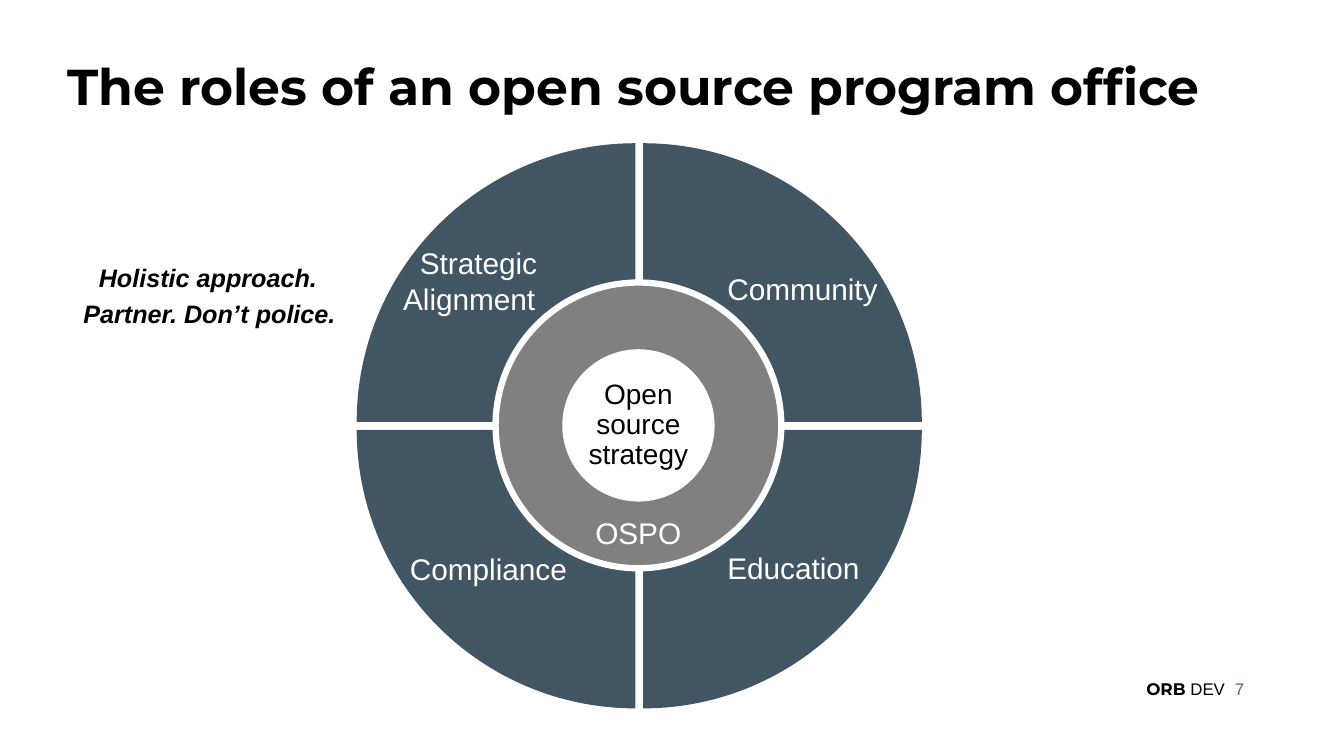
from pptx import Presentation
from pptx.dml.color import RGBColor
from pptx.enum.shapes import MSO_SHAPE as Shape
from pptx.enum.text import MSO_ANCHOR as Anchor, PP_ALIGN as Align
from pptx.util import Cm, Pt

BLACK = RGBColor(0x00, 0x00, 0x00)
WHITE = RGBColor(0xFF, 0xFF, 0xFF)
SLATE = RGBColor(0x42, 0x55, 0x63)
GREY = RGBColor(0x80, 0x80, 0x80)
PURPLE = RGBColor(0x72, 0x54, 0x78)

CENTER_X, CENTER_Y = 16.11, 10.73
RADIUS, HALF_GAP = 7.02, 0.1
QUADRANTS = [(-1, -1), (1, -1), (1, 1), (-1, 1)]


class WheelSlide:
    heading_font = "Montserrat"
    body_font = "Arial"

    def __init__(self, deck):
        self.shapes = deck.slides.add_slide(deck.slide_layouts[6]).shapes

    def style(self, span, size, color, font=None, bold=False, italic=False):
        span.font.name = font or self.body_font
        span.font.size = Pt(size)
        span.font.color.rgb = color
        span.font.bold = bold
        span.font.italic = italic

    def frame(self, box, inset, anchor):
        frame = box.text_frame
        frame.word_wrap = True
        frame.vertical_anchor = anchor
        frame.margin_left = frame.margin_right = Cm(inset)
        frame.margin_top = frame.margin_bottom = Cm(inset / 2)
        return frame

    def text(self, place, words, size, color, inset=0, anchor=Anchor.TOP,
             align=Align.LEFT, spacing=1.0, **look):
        box = self.shapes.add_textbox(*map(Cm, place))
        para = self.frame(box, inset, anchor).paragraphs[0]
        para.text = words
        para.alignment = align
        para.line_spacing = spacing
        self.style(para.runs[0], size, color, **look)
        return para

    def label(self, place, words, align=Align.LEFT):
        return self.text(place, words, 21.3, WHITE, inset=0.25, align=align)

    def filled(self, kind, center_x, center_y, size, fill):
        shape = self.shapes.add_shape(
            kind, Cm(center_x - size / 2), Cm(center_y - size / 2), Cm(size), Cm(size))
        shape.shadow.inherit = False
        shape.fill.solid()
        shape.fill.fore_color.rgb = fill
        shape.line.fill.background()
        return shape

    def quadrant(self, side_x, side_y, turn):
        offset = HALF_GAP + RADIUS / 2
        shape = self.filled(Shape.PIE_WEDGE, CENTER_X + side_x * offset,
                            CENTER_Y + side_y * offset, RADIUS, SLATE)
        shape.rotation = turn

    def disc(self, diameter, fill, line_width):
        shape = self.filled(Shape.OVAL, CENTER_X - 0.02, CENTER_Y - 0.01,
                            diameter, fill)
        shape.line.color.rgb = WHITE
        shape.line.width = Pt(line_width)
        return shape

    def core(self, words):
        shape = self.disc(3.72, WHITE, 3.38)
        para = self.frame(shape, 0, Anchor.MIDDLE).paragraphs[0]
        para.text = words
        para.alignment = Align.CENTER
        para.line_spacing = 0.9
        self.style(para.runs[0], 20, BLACK)

    def footer(self, name, unit, number):
        para = self.text((19.94, 16.94, 11.18, 0.84), name, 12, BLACK,
                         inset=0.25, anchor=Anchor.MIDDLE, align=Align.RIGHT,
                         font=self.heading_font, bold=True)
        span = para.add_run()
        span.text = unit
        self.style(span, 12, BLACK)
        self.text((31.12, 16.94, 1.09, 0.84), number, 12, PURPLE,
                  anchor=Anchor.MIDDLE)


def main():
    deck = Presentation()
    deck.slide_width, deck.slide_height = Cm(33.87), Cm(19.05)
    slide = WheelSlide(deck)

    slide.text((1.7, 1.07, 30.48, 2.36), "The roles of an open source program office",
               36, BLACK, anchor=Anchor.MIDDLE, spacing=0.9,
               font=slide.heading_font, bold=True)

    for index, (side_x, side_y) in enumerate(QUADRANTS):
        slide.quadrant(side_x, side_y, 90 * index)
    slide.disc(7.2, GREY, 4.5)
    slide.core("Open source strategy")

    slide.label((18.08, 13.74, 6.02, 1.17), "Education")
    slide.label((18.08, 6.69, 6.4, 1.17), "Community")
    alignment = slide.label((9.91, 6.04, 4.93, 2.08), "Strategic Alignment")
    alignment._p.get_or_add_pPr().set("indent", str(Cm(0.42)))
    slide.label((10.08, 13.76, 4.55, 1.17), "Compliance")
    slide.label((13.81, 12.84, 4.55, 1.17), "OSPO", Align.CENTER)

    for left, top, words in [(2.1, 7.61, "Partner. Don’t police."),
                             (2.49, 6.69, "Holistic approach.")]:
        slide.text((left, top, 6.6, 1.02), words, 18, BLACK, spacing=0.9,
                   bold=True, italic=True)

    slide.footer("ORB ", "DEV", "7")
    deck.save("out.pptx")


if __name__ == "__main__":
    main()
